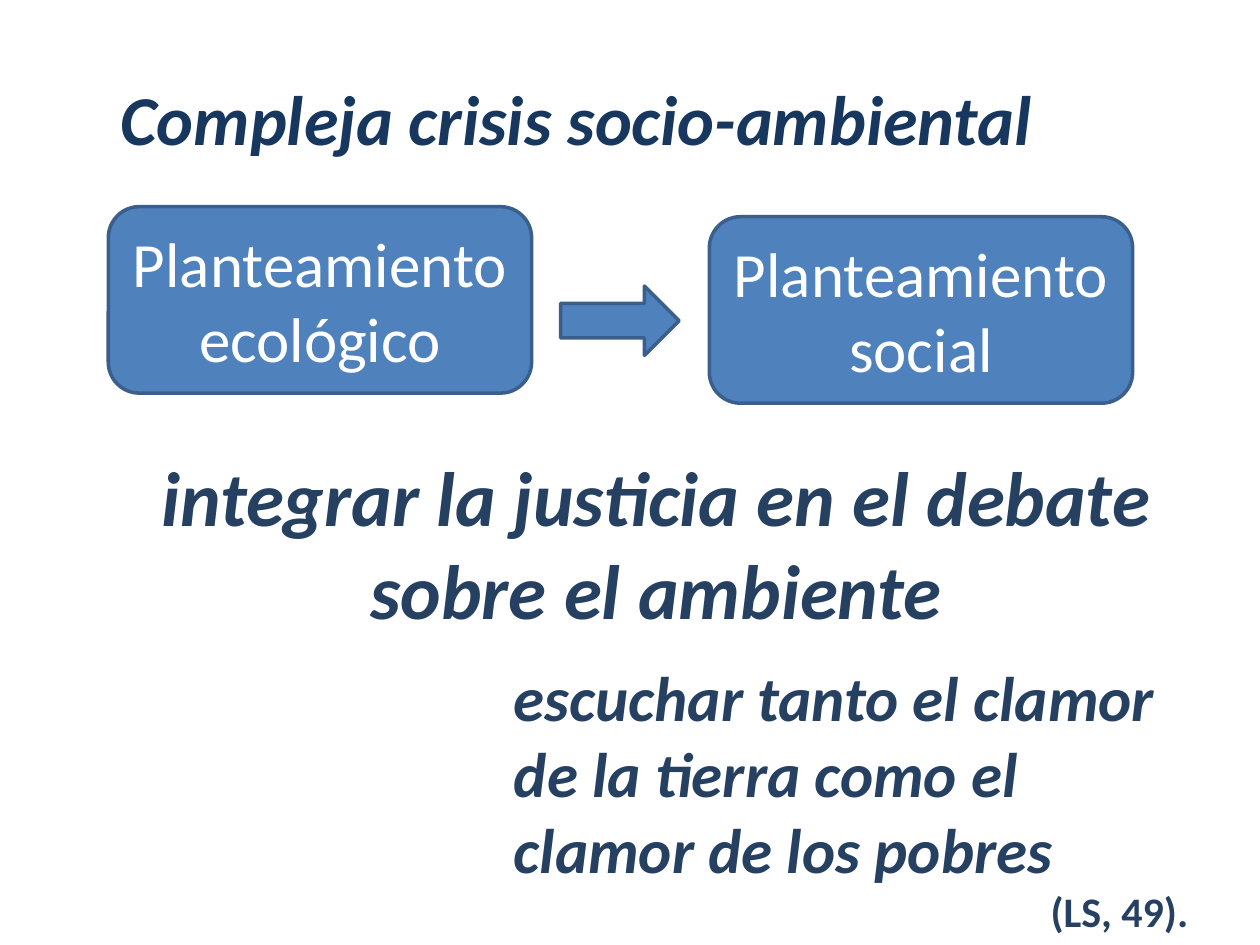
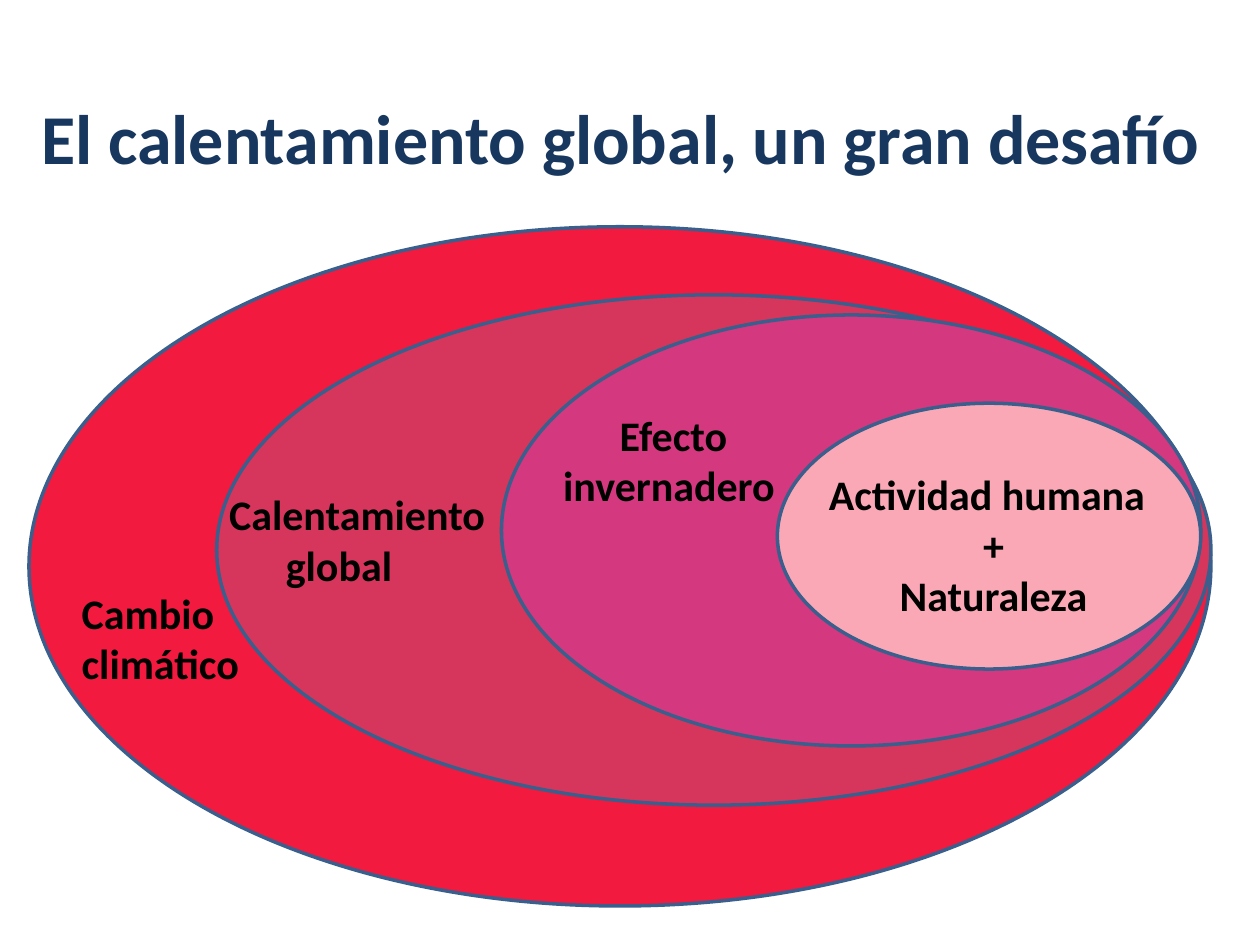
"""Build two slides on the social and environmental crisis."""
from dataclasses import dataclass

from pptx import Presentation
from pptx.dml.color import RGBColor
from pptx.enum.shapes import MSO_SHAPE
from pptx.enum.text import MSO_ANCHOR, PP_ALIGN
from pptx.util import Inches, Pt

ROUND, ARROW, OVAL = MSO_SHAPE.ROUNDED_RECTANGLE, MSO_SHAPE.RIGHT_ARROW, MSO_SHAPE.OVAL
LEFT, MID, RIGHT = PP_ALIGN.LEFT, PP_ALIGN.CENTER, PP_ALIGN.RIGHT
CENTER = MSO_ANCHOR.MIDDLE
Place = tuple[float, float, float, float]


@dataclass(frozen=True)
class Theme:
    font: str = "Calibri"
    title: str = "17375E"
    body: str = "254061"
    blue: str = "4F81BD"
    edge: str = "3A5F8C"
    white: str = "FFFFFF"
    black: str = "000000"
    line: float = 2
    small: int = 24
    large: int = 36
    head: int = 40
    lead: int = 44


THEME = Theme()


@dataclass(frozen=True)
class Line:
    text: str
    size: int = THEME.small
    color: str = THEME.black
    bold: bool = True
    slant: bool = False
    align: PP_ALIGN = LEFT
    indent: float = 0


@dataclass(frozen=True)
class Form:
    kind: MSO_SHAPE
    place: Place
    fill: str = THEME.blue
    text: str = ""


@dataclass(frozen=True)
class Label:
    place: Place
    lines: tuple[Line, ...]


def write(frame, lines: tuple[Line, ...]) -> None:
    frame.word_wrap = True
    for num, line in enumerate(lines):
        para = frame.add_paragraph() if num else frame.paragraphs[0]
        para.text = line.text
        para.alignment = line.align
        if line.indent:
            para._p.get_or_add_pPr().set("marL", str(Inches(line.indent)))
        font = para.runs[0].font
        font.name, font.size = THEME.font, Pt(line.size)
        font.bold, font.italic = line.bold, line.slant
        font.color.rgb = RGBColor.from_string(line.color)


def draw(slide, form: Form) -> None:
    shape = slide.shapes.add_shape(form.kind, *map(Inches, form.place))
    shape.shadow.inherit = False
    shape.fill.solid()
    shape.fill.fore_color.rgb = RGBColor.from_string(form.fill)
    shape.line.color.rgb = RGBColor.from_string(THEME.edge)
    shape.line.width = Pt(THEME.line)
    if form.text:
        shape.text_frame.vertical_anchor = CENTER
        write(shape.text_frame, (Line(form.text, THEME.large, THEME.white, False, align=MID),))


def label(slide, item: Label) -> None:
    box = slide.shapes.add_textbox(*map(Inches, item.place))
    write(box.text_frame, item.lines)


def build(deck, title: Label, forms: tuple[Form, ...], labels: tuple[Label, ...]) -> None:
    slide = deck.slides.add_slide(deck.slide_layouts[6])
    for form in forms:
        draw(slide, form)
    for item in (title, *labels):
        label(slide, item)


def heading(place: Place, text: str, slant: bool = False) -> Label:
    return Label(place, (Line(text, THEME.head, THEME.title, slant=slant),))


CRISIS = (
    Form(ROUND, (0.86, 1.64, 3.36, 1.48), text="Planteamiento ecológico"),
    Form(ROUND, (5.63, 1.72, 3.36, 1.48), text="Planteamiento social"),
    Form(ARROW, (4.45, 2.27, 0.94, 0.55)),
)
CALLS = (
    Label((0.47, 3.52, 8.98, 1.58), (
        Line("integrar la justicia en el debate sobre el ambiente",
             THEME.lead, THEME.body, slant=True, align=MID, indent=0.5),
    )),
    Label((3.98, 5.18, 5.55, 2.32), (
        Line("escuchar tanto el clamor de la tierra como el clamor de los pobres",
             THEME.large, THEME.body, slant=True),
        Line("(LS, 49).", color=THEME.body, align=RIGHT),
    )),
)
RINGS = (
    Form(OVAL, (0.23, 1.8, 9.38, 5.39), "F21A3E"),
    Form(OVAL, (1.72, 2.34, 7.89, 4.05), "D6365C"),
    Form(OVAL, (3.98, 2.5, 5.55, 3.42), "D4387F"),
    Form(OVAL, (6.17, 3.2, 3.36, 2.11), "FAA8B6"),
)
CAUSES = (
    Label((0.55, 4.61, 1.56, 0.91), (Line("Cambio climático"),)),
    Label((1.72, 3.83, 2.27, 0.91), (Line("Calentamiento"), Line("global", indent=0.45))),
    Label((4.37, 3.2, 1.95, 0.91), (Line("Efecto", indent=0.45), Line("invernadero"))),
    Label((6.48, 3.67, 2.81, 1.31), (
        Line("Actividad humana"), Line("+", align=MID), Line("Naturaleza", align=MID),
    )),
)


def main() -> None:
    deck = Presentation()
    deck.slide_width, deck.slide_height = Inches(10), Inches(7.5)
    build(deck, heading((0.86, 0.55, 8.44, 0.77), "Compleja crisis socio-ambiental", True),
          CRISIS, CALLS)
    build(deck, heading((0.23, 0.7, 9.5, 0.77), "El calentamiento global, un gran desafío"),
          RINGS, CAUSES)
    deck.save("out.pptx")


if __name__ == "__main__":
    main()
